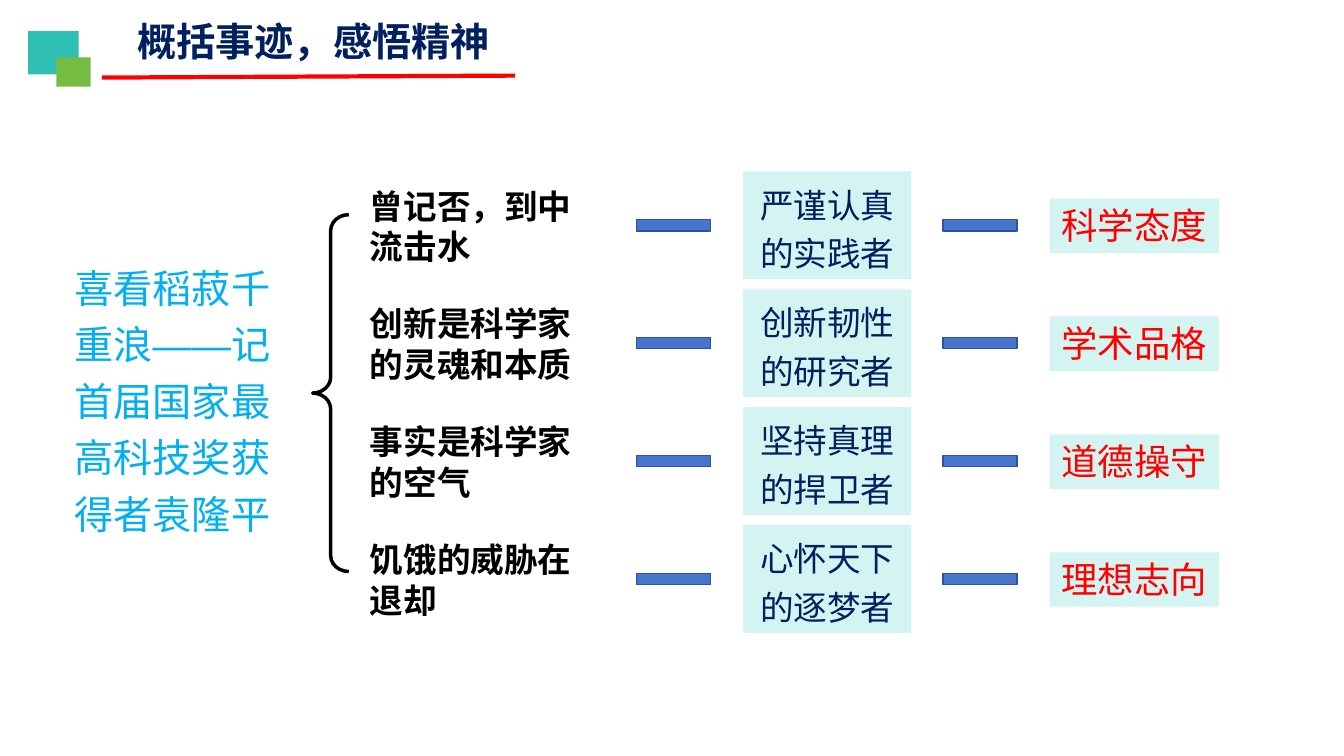
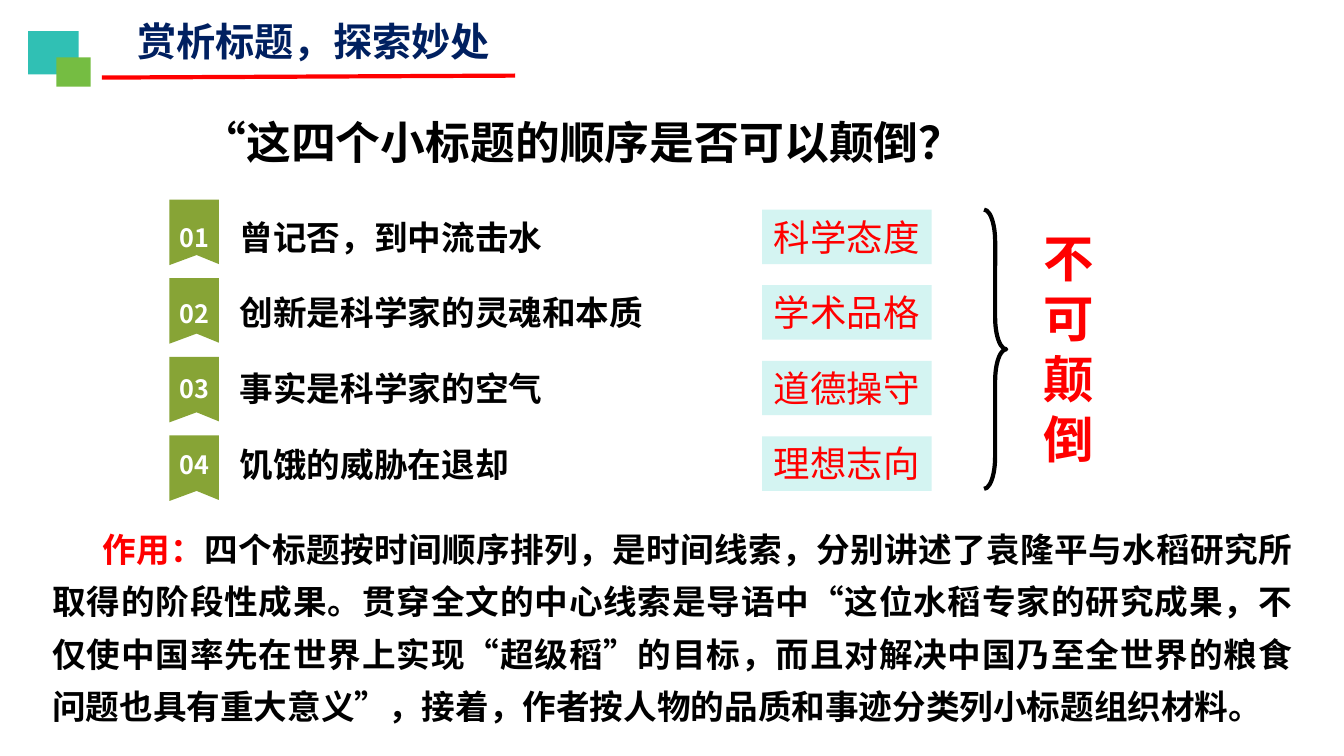
from dataclasses import dataclass

from lxml import etree
from pptx import Presentation
from pptx.dml.color import RGBColor
from pptx.enum import shapes, text
from pptx.oxml.ns import qn
from pptx.util import Inches, Pt


@dataclass(frozen=True)
class Theme:
    # Colours
    navy: str = "002060"
    red: str = "FF0000"
    black: str = "000000"
    white: str = "FFFFFF"
    sky: str = "00B0F0"
    teal: str = "30C0B4"
    green: str = "75BD42"
    olive: str = "87A436"
    mint: str = "D4F4F2"
    blue: str = "4874CB"
    blue_edge: str = "2E54A1"
    # Fonts and type sizes
    font: str = "Noto Sans CJK SC"
    portrait_font: str = "Noto Sans CJK JP"
    lead_font: str = "Arial"
    title: int = 28
    question: int = 32
    body: int = 24
    tag: int = 26
    number: int = 18
    verdict: int = 36
    line_height: float = 1.2


THEME = Theme()
LEFT, CENTER, JUSTIFY = (text.PP_ALIGN.LEFT, text.PP_ALIGN.CENTER,
                         text.PP_ALIGN.JUSTIFY)
SHAPE = shapes.MSO_SHAPE


class Deck:
    """Holds the presentation, its style and the current slide."""

    def __init__(self, theme):
        self.theme = theme
        self.presentation = Presentation()
        self.presentation.slide_width = Inches(13.33)
        self.presentation.slide_height = Inches(7.5)
        self.slide = None

    def new_slide(self, title):
        layout = self.presentation.slide_layouts.get_by_name("Title Only")
        self.slide = self.presentation.slides.add_slide(layout)
        self.rule((1.01, 0.77), (5.11, 0.75))
        self.shape(SHAPE.RECTANGLE, (0.28, 0.31, 0.5, 0.43), self.theme.teal)
        self.shape(SHAPE.RECTANGLE, (0.56, 0.57, 0.34, 0.29), self.theme.green)
        heading = self.slide.shapes.title
        heading.left, heading.top, heading.width, heading.height = map(
            Inches, (1.01, 0.12, 4.2, 0.57))
        self.set_text(heading, title, self.theme.title, self.theme.navy,
                      bold=True, align=CENTER)

    def set_text(self, shape, content, size, color, font=None, bold=False,
                 align=LEFT, spacing=1.0, indent=0,
                 anchor=text.MSO_ANCHOR.TOP):
        """Fill a shape with one paragraph; content is text or (text, color) runs."""
        frame = shape.text_frame
        frame.word_wrap = True
        frame.auto_size = text.MSO_AUTO_SIZE.NONE
        frame.vertical_anchor = anchor
        paragraph = frame.paragraphs[0]
        paragraph.alignment = align
        paragraph.line_spacing = Pt(
            round(size * self.theme.line_height * spacing, 1))
        properties = paragraph._p.get_or_add_pPr()
        if indent:
            properties.set("indent", str(Inches(indent)))
        runs = [(content, color)] if isinstance(content, str) else content
        for words, run_color in runs:
            run = paragraph.add_run()
            run.text = words
            if run_color != color:
                run.font.color.rgb = RGBColor.from_string(run_color)
        name = font or self.theme.font
        paragraph.font.name = name
        paragraph.font.size = Pt(size)
        paragraph.font.bold = bold
        paragraph.font.color.rgb = RGBColor.from_string(color)
        # East Asian typeface
        defaults = properties.find(qn("a:defRPr"))
        defaults.find(qn("a:latin")).addnext(
            etree.Element(qn("a:ea"), typeface=name))

    def text_box(self, box, content, size, color, **style):
        shape = self.slide.shapes.add_textbox(*map(Inches, box))
        self.set_text(shape, content, size, color, **style)

    def paint(self, shape, fill=None, line=None, weight=1):
        shape.shadow.inherit = False
        if fill:
            shape.fill.solid()
            shape.fill.fore_color.rgb = RGBColor.from_string(fill)
        else:
            shape.fill.background()
        if line:
            shape.line.color.rgb = RGBColor.from_string(line)
            shape.line.width = Pt(weight)
        else:
            shape.line.fill.background()

    def shape(self, kind, box, fill=None, line=None, weight=1):
        shape = self.slide.shapes.add_shape(kind, *map(Inches, box))
        self.paint(shape, fill, line, weight)
        return shape

    def rule(self, start, end):
        line = self.slide.shapes.add_connector(
            shapes.MSO_CONNECTOR.STRAIGHT, *map(Inches, start + end))
        line.line.color.rgb = RGBColor.from_string(self.theme.red)
        line.line.width = Pt(3)
        etree.SubElement(line._element.spPr, qn("a:effectLst"))

    def brace(self, kind, box, curve, weight):
        brace = self.shape(kind, box, line=self.theme.black, weight=weight)
        brace.adjustments[0] = curve

    def dash(self, left, top):
        self.shape(SHAPE.MATH_MINUS, (left, top, 1, 0.47), self.theme.blue,
                   self.theme.blue_edge)

    def tag(self, left, top, words):
        tag = self.shape(SHAPE.RECTANGLE, (left, top, 1.68, 0.54),
                         self.theme.mint)
        self.set_text(tag, words, self.theme.tag, self.theme.red, align=CENTER)

    def portrait(self, left, top, words):
        card = self.shape(SHAPE.RECTANGLE, (left, top, 1.67, 1.07),
                          self.theme.mint)
        self.set_text(card, words, self.theme.body, self.theme.navy,
                      font=self.theme.portrait_font, align=CENTER, spacing=1.2)

    def ribbon(self, left, top):
        outline = [(0, 0), (0.49, 0), (0.49, 0.64), (0.27, 0.55), (0, 0.65)]
        points = [(Inches(left + x), Inches(top + y)) for x, y in outline]
        builder = self.slide.shapes.build_freeform(*points[0])
        builder.add_line_segments(points[1:], close=True)
        self.paint(builder.convert_to_shape(), self.theme.olive)


# Subtitle of the article, portrait of the scientist, quality shown
ROWS = [
    ("曾记否，到中流击水", "严谨认真的实践者", "科学态度"),
    ("创新是科学家的灵魂和本质", "创新韧性的研究者", "学术品格"),
    ("事实是科学家的空气", "坚持真理的捍卫者", "道德操守"),
    ("饥饿的威胁在退却", "心怀天下的逐梦者", "理想志向"),
]

EFFECT = (
    "四个标题按时间顺序排列，是时间线索，分别讲述了袁隆平与水稻研究所取得的阶段性成果。"
    "贯穿全文的中心线索是导语中“这位水稻专家的研究成果，不仅使中国率先在世界上实现“超级稻”的目标，"
    "而且对解决中国乃至全世界的粮食问题也具有重大意义”，"
    "接着，作者按人物的品质和事迹分类列小标题组织材料。"
)


def build_summary(deck):
    theme = deck.theme
    deck.new_slide("概括事迹，感悟精神")
    # Article title and brace
    deck.text_box((0.64, 2.48, 2.2, 2.93),
                  "喜看稻菽千重浪——记首届国家最高科技奖获得者袁隆平",
                  theme.title, theme.sky, font=theme.lead_font, spacing=1.2)
    deck.brace(SHAPE.LEFT_BRACE, (3.1, 2.13, 0.36, 3.54), 0.44, 2.5)
    # One row for each subtitle
    for index, (subtitle, portrait, quality) in enumerate(ROWS):
        top = 1.7 + 1.17 * index
        deck.text_box((3.57, top + 0.09, 2.44, 0.91), subtitle,
                      theme.body, theme.black, bold=True)
        deck.dash(6.18, top + 0.3)
        deck.portrait(7.37, top, portrait)
        deck.dash(9.22, top + 0.3)
        deck.tag(10.41, top + 0.27, quality)


def build_order(deck):
    theme = deck.theme
    deck.new_slide("赏析标题，探索妙处")
    deck.text_box((1.9, 1.09, 7.8, 0.64), "“这四个小标题的顺序是否可以颠倒？",
                  theme.question, theme.black, bold=True)
    # Numbered subtitles and their qualities
    for index, (subtitle, _, quality) in enumerate(ROWS):
        top = 2.08 + 0.75 * index
        deck.ribbon(1.68, 1.98 + 0.78 * index)
        deck.text_box((1.63, top + 0.12, 0.59, 0.31), f"{index + 1:02}",
                      theme.number, theme.white, bold=True, align=CENTER,
                      anchor=text.MSO_ANCHOR.MIDDLE)
        deck.text_box((2.28, top + 0.02, 4.26, 0.5), subtitle,
                      theme.body, theme.black, bold=True)
        deck.tag(7.56, top, quality)
    # Verdict
    deck.brace(SHAPE.RIGHT_BRACE, (9.76, 2.08, 0.22, 2.77), 1.44, 3)
    deck.text_box((10.25, 2.2, 0.65, 2.52), "不可颠倒", theme.verdict,
                  theme.red, bold=True, align=CENTER)
    # Explanation
    deck.text_box((0.42, 5.08, 12.5, 2.2),
                  [("作用：", theme.red), (EFFECT, theme.black)],
                  theme.body, theme.black, bold=True, align=JUSTIFY,
                  spacing=1.3, indent=0.5)


def main():
    deck = Deck(THEME)
    build_summary(deck)
    build_order(deck)
    deck.presentation.save("out.pptx")


if __name__ == "__main__":
    main()
